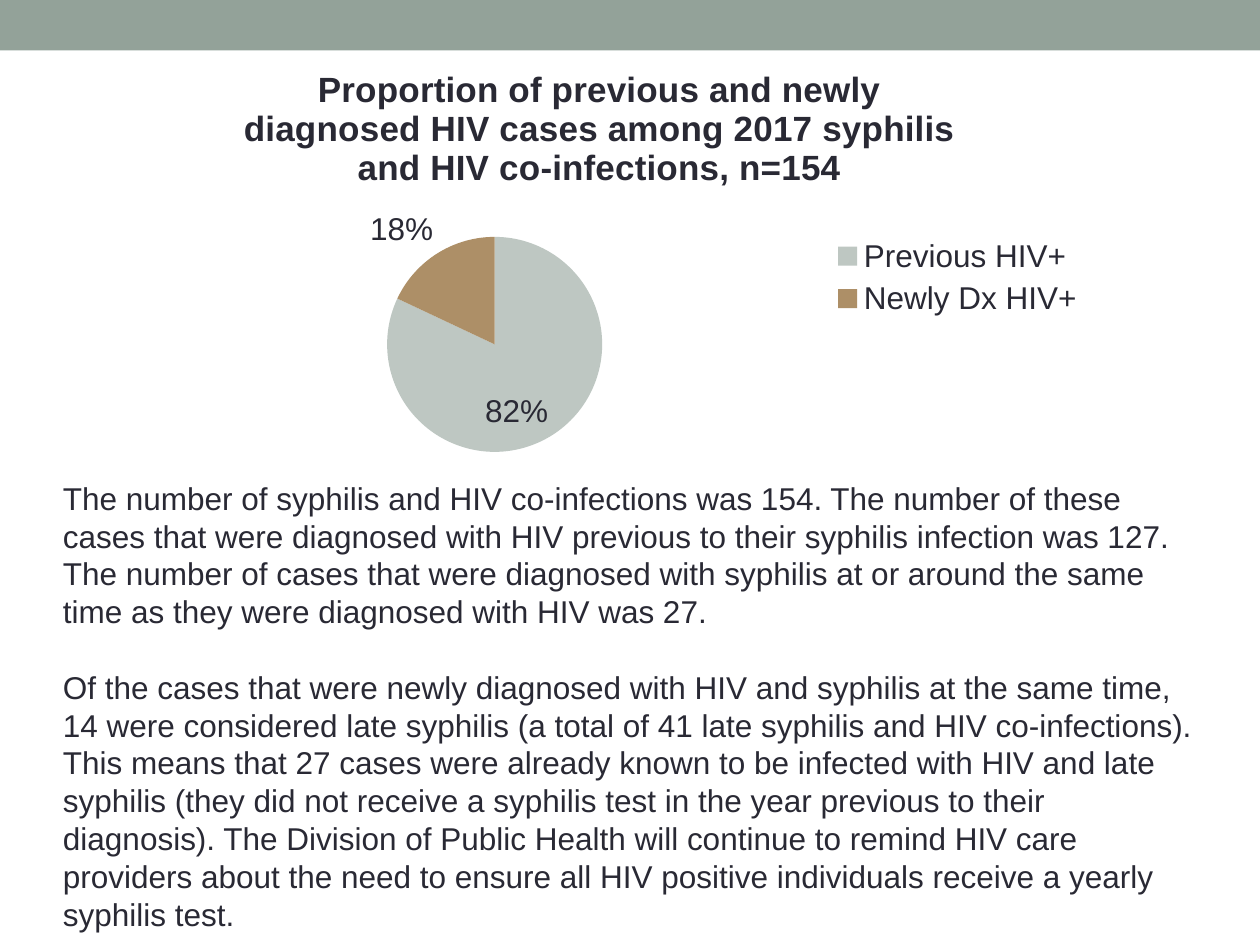
from lxml.etree import SubElement
from pptx import Presentation
from pptx.chart.data import CategoryChartData
from pptx.dml.color import RGBColor
from pptx.enum.chart import XL_CHART_TYPE, XL_LABEL_POSITION, XL_LEGEND_POSITION
from pptx.enum.shapes import MSO_SHAPE
from pptx.oxml.ns import qn
from pptx.util import Cm, Pt

COLORS = {"band": "93A299", "ink": "292934", "previous": "BEC7C2", "new": "AD8F67"}

HEADING = ("Proportion of previous and newly diagnosed HIV cases among "
           "2017 syphilis and HIV co-infections, n=154")
SLICES = [
    ("Previous HIV+", 82, "previous", XL_LABEL_POSITION.INSIDE_END),
    ("Newly Dx HIV+", 18, "new", XL_LABEL_POSITION.OUTSIDE_END),
]
FINDINGS = [
    "The number of syphilis and HIV co-infections was 154. The number of these cases "
    "that were diagnosed with HIV previous to their syphilis infection was 127. The "
    "number of cases that were diagnosed with syphilis at or around the same time as "
    "they were diagnosed with HIV was 27.",
    "Of the cases that were newly diagnosed with HIV and syphilis at the same time, 14 "
    "were considered late syphilis (a total of 41 late syphilis and HIV co-infections). "
    "This means that 27 cases were already known to be infected with HIV and late "
    "syphilis (they did not receive a syphilis test in the year previous to their "
    "diagnosis). The Division of Public Health will continue to remind HIV care "
    "providers about the need to ensure all HIV positive individuals receive a yearly "
    "syphilis test.",
]
LINE = Pt(21.6)


def color(key):
    """Return the named palette colour."""
    return RGBColor.from_string(COLORS[key])


def style_font(font, size, bold=False):
    """Apply the slide's typeface and ink at the given size."""
    for name, value in {"name": "Arial", "size": Pt(size), "bold": bold}.items():
        setattr(font, name, value)
    font.color.rgb = color("ink")


def place(element, **fractions):
    """Give a chart part a manual layout in fractions of the chart box."""
    layout = element.find(qn("c:layout"))
    if layout is None:
        layout = element.makeelement(qn("c:layout"), {})
        anchor = next((child for child in element
                       if child.tag in (qn("c:tx"), qn("c:legendPos"))), None)
        if anchor is None:
            element.insert(0, layout)
        else:
            anchor.addnext(layout)
    for child in list(layout):
        layout.remove(child)
    manual = SubElement(layout, qn("c:manualLayout"))
    if element.tag == qn("c:plotArea"):
        SubElement(manual, qn("c:layoutTarget"), val="inner")
    for axis in "xy":
        SubElement(manual, qn(f"c:{axis}Mode"), val="edge")
    for name, value in fractions.items():
        SubElement(manual, qn(f"c:{name}"), val=str(value))


def add_band(slide, left, top, width, height):
    """Draw the plain band along the top edge."""
    band = slide.shapes.add_shape(MSO_SHAPE.RECTANGLE, left, top, width, height)
    band.shadow.inherit = False
    band.fill.solid()
    band.fill.fore_color.rgb = color("band")
    band.line.fill.background()


def add_diagnosis_pie(slide, left, top, width, height):
    """Draw the pie of previous and new diagnoses with heading and legend."""
    shares = CategoryChartData()
    shares.categories = [label for label, *_ in SLICES]
    shares.add_series("Series 1", [share for _, share, *_ in SLICES])
    chart = slide.shapes.add_chart(
        XL_CHART_TYPE.PIE, left, top, width, height, shares).chart
    style_font(chart.font, 10)

    chart.has_title = True
    heading = chart.chart_title.text_frame
    heading.text = HEADING
    style_font(heading.paragraphs[0].runs[0].font, 20, bold=True)
    place(chart.chart_title._element, x=0.08, y=0.04)

    chart.has_legend = True
    chart.legend.position = XL_LEGEND_POSITION.RIGHT
    chart.legend.include_in_layout = False
    style_font(chart.legend.font, 18)
    place(chart.legend._element, x=0.71, y=0.41, w=0.28, h=0.2)

    pie = chart.plots[0]
    pie.vary_by_categories = True
    pie.has_data_labels = True
    labels = pie.data_labels
    formats = {"show_percentage": True, "show_value": False,
               "number_format": "0%", "number_format_is_linked": False}
    for name, value in formats.items():
        setattr(labels, name, value)
    style_font(labels.font, 18)
    for index, (_, _, fill, position) in enumerate(SLICES):
        point = pie.series[0].points[index]
        point.format.fill.solid()
        point.format.fill.fore_color.rgb = color(fill)
        style_font(point.data_label.font, 18)
        point.data_label.position = position
        label = point.data_label._dLbl
        label.find(qn("c:showVal")).set("val", "0")
        label.find(qn("c:showPercent")).set("val", "1")
    plot_area = chart._chartSpace.find(f".//{qn('c:plotArea')}")
    place(plot_area, x=0.24, y=0.42, w=0.23, h=0.47)


def add_findings(slide, left, top, width, height):
    """Write the explanatory paragraphs, one line apart."""
    frame = slide.shapes.add_textbox(left, top, width, height).text_frame
    frame.word_wrap = True
    frame.text = "\n".join(FINDINGS)
    for index, paragraph in enumerate(frame.paragraphs):
        paragraph.line_spacing = LINE
        paragraph.space_before = LINE if index else Pt(0)
        style_font(paragraph.runs[0].font, 18)


def main():
    """Build and save the slide."""
    deck = Presentation()
    deck.slide_width, deck.slide_height = Cm(25.4), Cm(19.05)
    slide = deck.slides.add_slide(deck.slide_layouts[6])
    add_band(slide, 0, 0, deck.slide_width, Cm(1.02))
    add_diagnosis_pie(slide, Cm(3.28), Cm(0.84), Cm(18.85), Cm(9.32))
    add_findings(slide, Cm(1.02), Cm(9.53), Cm(23.5), Cm(9.5))
    deck.save("out.pptx")


if __name__ == "__main__":
    main()
